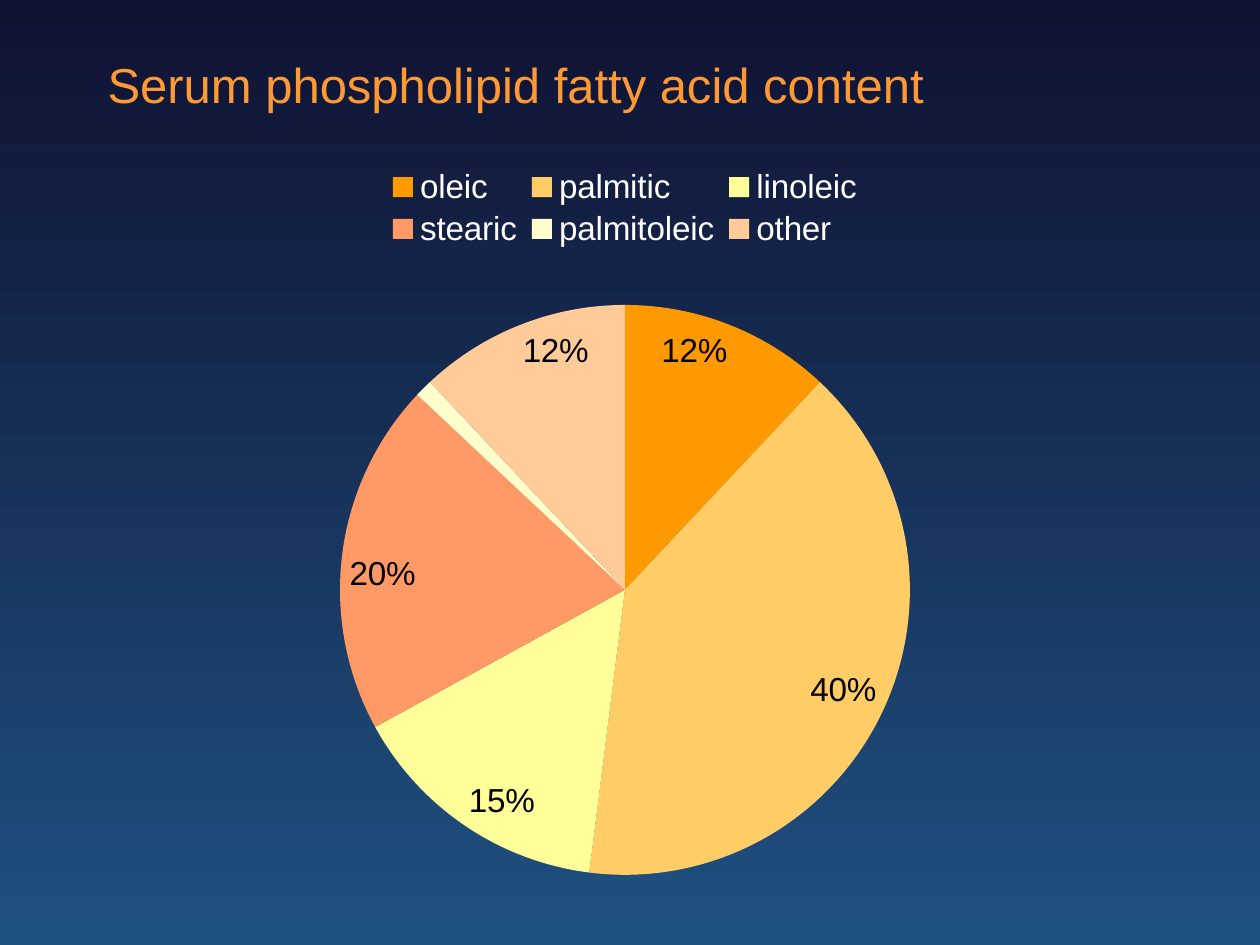
from dataclasses import dataclass

from pptx import Presentation
from pptx.chart.data import CategoryChartData
from pptx.dml.color import RGBColor
from pptx.enum.chart import XL_CHART_TYPE as ChartType
from pptx.enum.chart import XL_LABEL_POSITION as LabelPosition
from pptx.enum.chart import XL_LEGEND_POSITION as LegendPosition
from pptx.enum.text import MSO_ANCHOR as Anchor
from pptx.enum.text import MSO_AUTO_SIZE as AutoSize
from pptx.enum.text import PP_ALIGN as Align
from pptx.oxml import parse_xml
from pptx.oxml.ns import nsdecls
from pptx.util import Pt

EMU_PER_PX = 914400 // 126
SLIDE_SIZE = (1260, 945)
TITLE_BOX = (95, 48, 852, 72)
CHART_BOX = (105, 151, 1041, 741)
PIE_BOX = (340, 305, 570, 570)
LEGEND_BOX = (378, 164, 494, 88)


@dataclass(frozen=True)
class Theme:
    font: str = "Arial"
    background: tuple = ("101232", "1E5180")
    title: str = "FF9933"
    legend: str = "FFFFFF"
    label: str = "000000"
    title_size: int = 28
    chart_size: int = 19


THEME = Theme()

# Fatty acid, share in percent, slice colour
FATTY_ACIDS = [
    ("oleic", 12, "FF9900"),
    ("palmitic", 40, "FFCC66"),
    ("linoleic", 15, "FFFF99"),
    ("stearic", 20, "FF9966"),
    ("palmitoleic", 1, "FFFFCC"),
    ("other", 12, "FFCC99"),
]
UNLABELLED = "palmitoleic"


def px(*lengths):
    return [length * EMU_PER_PX for length in lengths]


def style_font(font, size, color):
    font.name = THEME.font
    font.size = Pt(size)
    font.color.rgb = RGBColor.from_string(color)


def paint_background(slide):
    fill = slide.background.fill
    fill.gradient()
    fill.gradient_angle = 270
    for stop, color in zip(fill.gradient_stops, THEME.background):
        stop.color.rgb = RGBColor.from_string(color)


def add_title(slide, text):
    title = slide.shapes.title
    title.left, title.top, title.width, title.height = px(*TITLE_BOX)
    frame = title.text_frame
    frame.word_wrap = False
    frame.auto_size = AutoSize.SHAPE_TO_FIT_TEXT
    frame.vertical_anchor = Anchor.TOP
    paragraph = frame.paragraphs[0]
    paragraph.alignment = Align.LEFT
    run = paragraph.add_run()
    run.text = text
    style_font(run.font, THEME.title_size, THEME.title)


def place_in_chart(element, index, box, target=""):
    """Give a chart part a fixed box, as fractions of the chart's frame."""
    for layout in element.xpath("./c:layout"):
        element.remove(layout)
    left, top, width, height = CHART_BOX
    fractions = {
        "x": (box[0] - left) / width,
        "y": (box[1] - top) / height,
        "w": box[2] / width,
        "h": box[3] / height,
    }
    values = "".join(f'<c:{k} val="{v:.4f}"/>' for k, v in fractions.items())
    element.insert(index, parse_xml(
        f'<c:layout {nsdecls("c")}><c:manualLayout>{target}'
        f'<c:xMode val="edge"/><c:yMode val="edge"/>{values}'
        "</c:manualLayout></c:layout>"))


def add_labels(chart, series, hidden_index):
    labels = series.data_labels
    labels.show_percentage = True
    labels.show_value = False
    labels.number_format = "0%"
    labels.number_format_is_linked = False
    labels.position = LabelPosition.INSIDE_END
    style_font(labels.font, THEME.chart_size, THEME.label)
    # The thinnest slice carries no label
    chart.element.xpath(".//c:ser/c:dLbls")[0].insert(0, parse_xml(
        f'<c:dLbl {nsdecls("c")}><c:idx val="{hidden_index}"/>'
        '<c:delete val="1"/></c:dLbl>'))


def add_pie(slide):
    names, shares, colors = zip(*FATTY_ACIDS)
    data = CategoryChartData()
    data.categories = names
    data.add_series("Series 1", shares)
    chart = slide.shapes.add_chart(ChartType.PIE, *px(*CHART_BOX), data).chart
    chart.has_title = False
    style_font(chart.font, THEME.chart_size, THEME.label)

    # Slices
    plot = chart.plots[0]
    plot.vary_by_categories = True
    series = plot.series[0]
    for index, color in enumerate(colors):
        slice_format = series.points[index].format
        slice_format.fill.solid()
        slice_format.fill.fore_color.rgb = RGBColor.from_string(color)
        slice_format.line.fill.background()
    add_labels(chart, series, names.index(UNLABELLED))

    # Legend
    chart.has_legend = True
    chart.legend.position = LegendPosition.TOP
    chart.legend.include_in_layout = False
    style_font(chart.legend.font, THEME.chart_size, THEME.legend)

    # Fixed places for pie and legend
    place_in_chart(chart.element.xpath(".//c:plotArea")[0], 0, PIE_BOX,
                   '<c:layoutTarget val="inner"/>')
    place_in_chart(chart.element.xpath(".//c:legend")[0], 1, LEGEND_BOX)


def main():
    presentation = Presentation()
    presentation.slide_width, presentation.slide_height = px(*SLIDE_SIZE)
    slide = presentation.slides.add_slide(presentation.slide_layouts[5])
    paint_background(slide)
    add_pie(slide)
    add_title(slide, "Serum phospholipid fatty acid content")
    presentation.save("out.pptx")


if __name__ == "__main__":
    main()
